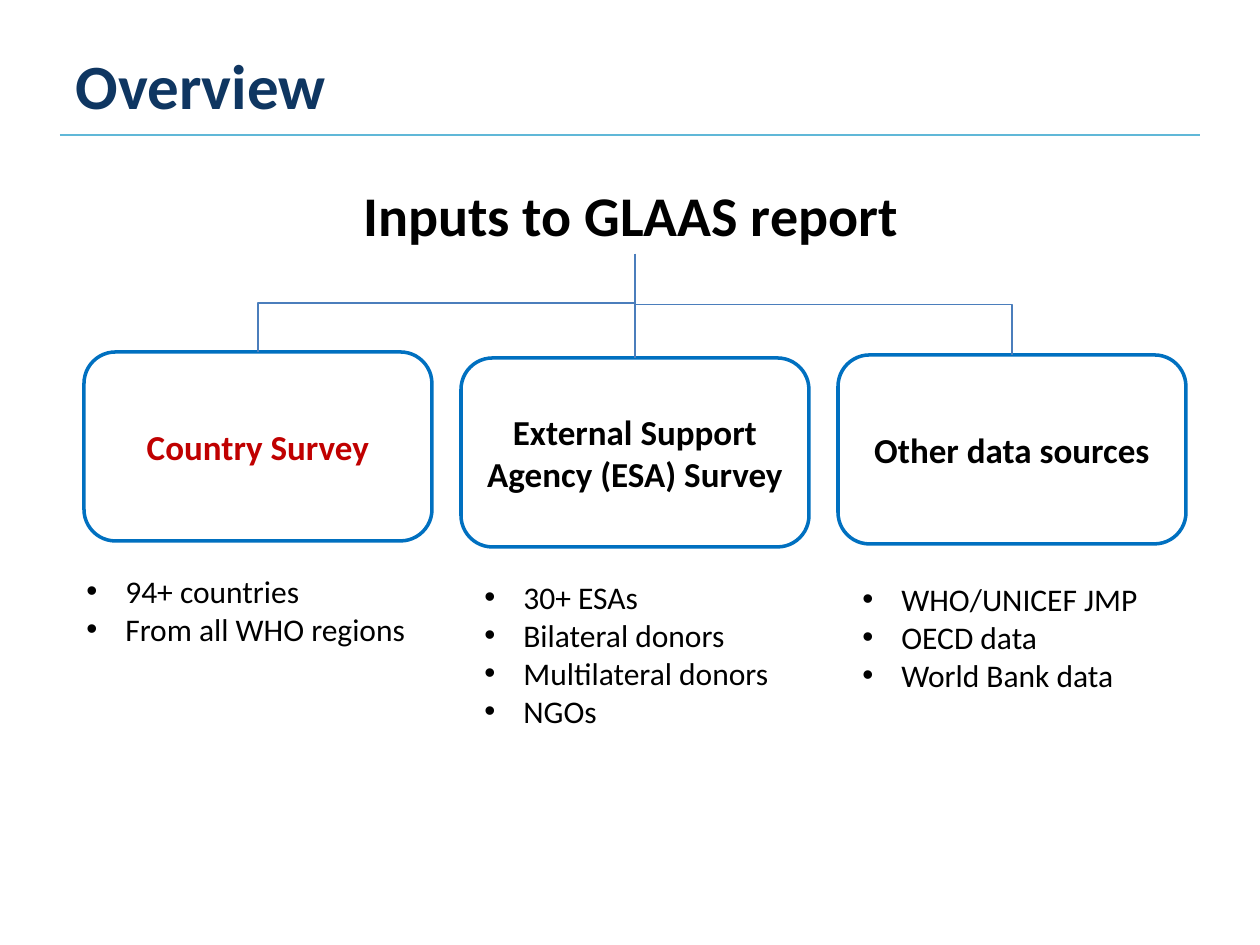
from lxml.etree import SubElement
from pptx import Presentation
from pptx.dml.color import RGBColor
from pptx.enum.shapes import MSO_CONNECTOR, MSO_SHAPE
from pptx.enum.text import MSO_ANCHOR, MSO_AUTO_SIZE, PP_ALIGN
from pptx.oxml.ns import qn
from pptx.util import Pt

PX = 914400 / 126
FONT = "Calibri"
NAVY = RGBColor(0x0F, 0x36, 0x61)
BLACK = RGBColor(0, 0, 0)
WHITE = RGBColor(255, 255, 255)
RED = RGBColor(0xC0, 0, 0)
BLUE = RGBColor(0, 0x70, 0xC0)
STEEL = RGBColor(0x4B, 0x7E, 0xBC)
SKY = RGBColor(0x60, 0xB8, 0xD8)

BOX_W, BOX_H = 348, 189
TRUNK_X, TRUNK_Y = 635, 254

# Box label, colour, left and top; then list left, top, width and items
SOURCES = [
    ("Country Survey", RED, 84, 352,
     (74, 566, 377), ["94+ countries", "From all WHO regions"]),
    ("External Support Agency (ESA) Survey", BLACK, 461, 358,
     (472, 572, 347), ["30+ ESAs", "Bilateral donors", "Multilateral donors", "NGOs"]),
    ("Other data sources", BLACK, 838, 355,
     (850, 574, 347), ["WHO/UNICEF JMP", "OECD data", "World Bank data"]),
]


def px(n):
    return round(n * PX)


def place(sp, x, y, w, h):
    sp.left, sp.top, sp.width, sp.height = px(x), px(y), px(w), px(h)


def add_bullet(p):
    pPr = p._p.get_or_add_pPr()
    pPr.set("marL", str(px(39)))
    pPr.set("indent", str(-px(39)))
    SubElement(pPr, qn("a:buFont")).set("typeface", "Arial")
    SubElement(pPr, qn("a:buChar")).set("char", "•")


def set_text(sp, lines, size, color=BLACK, bold=False, align=PP_ALIGN.LEFT,
             anchor=MSO_ANCHOR.TOP, bullets=False):
    tf = sp.text_frame
    tf.word_wrap = True
    tf.auto_size = MSO_AUTO_SIZE.NONE
    tf.vertical_anchor = anchor
    for i, line in enumerate(lines):
        p = tf.add_paragraph() if i else tf.paragraphs[0]
        p.alignment = align
        p.space_before = Pt(0)
        if bullets:
            add_bullet(p)
        r = p.add_run()
        r.text = line
        r.font.name, r.font.size, r.font.bold = FONT, Pt(size), bold
        r.font.color.rgb = color


def add_line(s, x1, y1, x2, y2, color=STEEL, width=0.75, kind=MSO_CONNECTOR.STRAIGHT):
    c = s.shapes.add_connector(kind, px(x1), px(y1), px(x2), px(y2))
    c.line.color.rgb = color
    c.line.width = Pt(width)
    SubElement(c._element.spPr, qn("a:effectLst"))
    return c


def add_branch(s, x1, y1, x2, y2):
    """Elbow that leaves downwards: a sideways elbow turned by a quarter."""
    mid_x, mid_y = (x1 + x2) / 2, (y1 + y2) / 2
    half_w, half_h = (y2 - y1) / 2, abs(x2 - x1) / 2
    side = 1 if x2 < x1 else -1
    c = add_line(s, mid_x - side * half_w, mid_y - half_h,
                 mid_x + side * half_w, mid_y + half_h, kind=MSO_CONNECTOR.ELBOW)
    degrees = 90 if side == 1 else 270
    c._element.spPr.find(qn("a:xfrm")).set("rot", str(degrees * 60000))


def add_box(s, label, color, x, y):
    sp = s.shapes.add_shape(MSO_SHAPE.ROUNDED_RECTANGLE, px(x), px(y), px(BOX_W), px(BOX_H))
    sp.shadow.inherit = False
    sp.fill.solid()
    sp.fill.fore_color.rgb = WHITE
    sp.line.color.rgb = BLUE
    sp.line.width = Pt(2)
    set_text(sp, [label], 20, color=color, bold=True,
             align=PP_ALIGN.CENTER, anchor=MSO_ANCHOR.MIDDLE)
    return sp


def add_list(s, x, y, w, items):
    sp = s.shapes.add_textbox(px(x), px(y), px(w), px(14 + 38 * len(items)))
    set_text(sp, items, 18, bullets=True)


def main():
    prs = Presentation()
    prs.slide_width, prs.slide_height = px(1260), px(945)
    s = prs.slides.add_slide(prs.slide_layouts.get_by_name("Comparison"))

    # Title and heading; the other placeholders are not needed
    title, heading, *unused = s.placeholders
    for sp in unused:
        sp._element.getparent().remove(sp._element)
    place(title, 63, 16, 1134, 137)
    set_text(title, ["Overview"], 36, color=NAVY, bold=True, anchor=MSO_ANCHOR.MIDDLE)
    place(heading, 64, 155, 1134, 99)
    set_text(heading, ["Inputs to GLAAS report"], 32, bold=True,
             align=PP_ALIGN.CENTER, anchor=MSO_ANCHOR.BOTTOM)
    add_line(s, 60, 135, 1200, 135, color=SKY, width=1)

    # Sources with their lists, joined to the heading
    for label, color, x, y, list_at, items in SOURCES:
        box = add_box(s, label, color, x, y)
        add_list(s, *list_at, items)
        center = x + BOX_W // 2
        if center == TRUNK_X:
            trunk = add_line(s, TRUNK_X, TRUNK_Y, center, y)
            trunk.end_connect(box, 0)
        else:
            add_branch(s, TRUNK_X, TRUNK_Y, center, y)

    prs.save("out.pptx")


if __name__ == "__main__":
    main()
